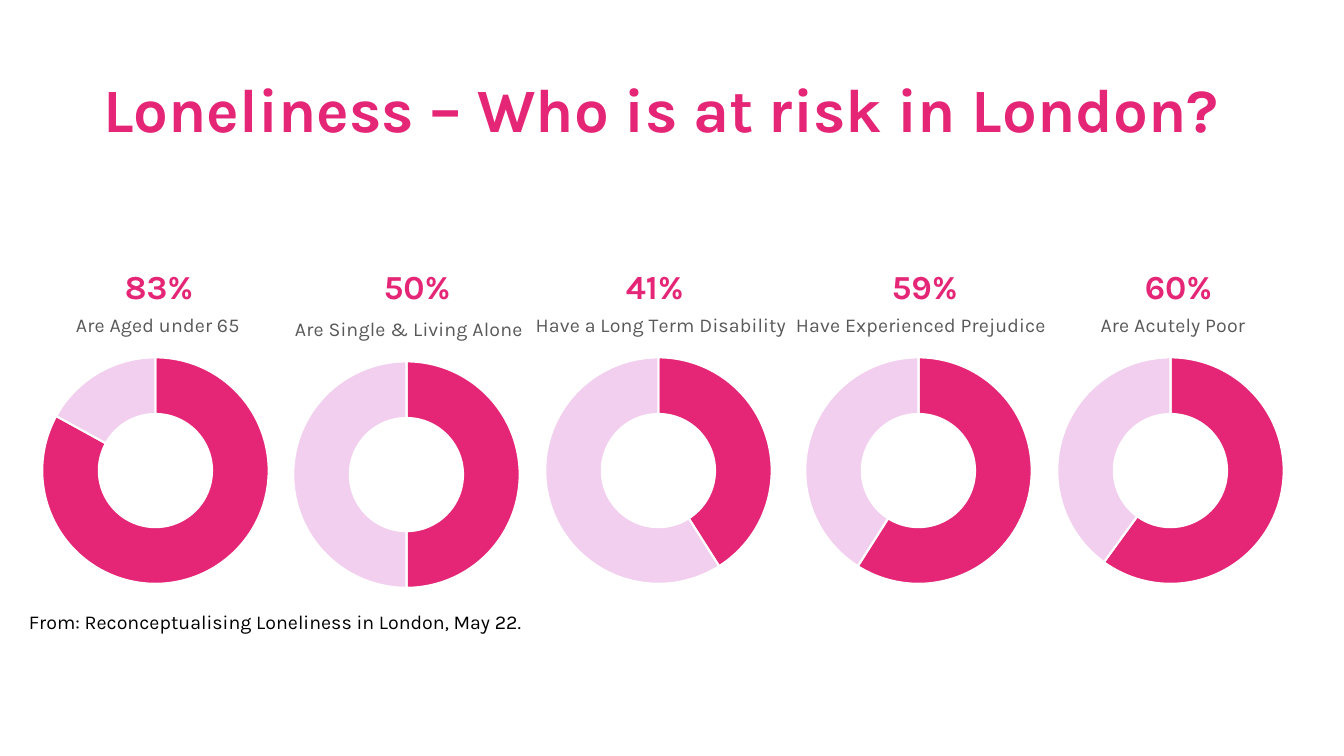
"""Builds a slide of five doughnut charts on who is at risk of loneliness in London."""
import pptx
import pptx.chart.data
import pptx.dml.color
import pptx.enum.chart
import pptx.enum.text
import pptx.oxml
import pptx.oxml.ns
import pptx.util

PINK = pptx.dml.color.RGBColor(0xE5, 0x25, 0x76)
PALE_PINK = pptx.dml.color.RGBColor(0xF2, 0xCF, 0xEE)
GREY = pptx.dml.color.RGBColor(0x59, 0x59, 0x59)
BLACK = pptx.dml.color.RGBColor(0, 0, 0)
WHITE = pptx.dml.color.RGBColor(255, 255, 255)
PX = 914400 / 100.8
CHART_NS = pptx.oxml.ns.nsdecls("c", "a")
RING_LAYOUT = (
    f'<c:layout {CHART_NS}><c:manualLayout><c:layoutTarget val="inner"/>'
    '<c:xMode val="edge"/><c:yMode val="edge"/><c:x val="0.27"/><c:y val="0.2"/>'
    '<c:w val="0.45"/><c:h val="0.75"/></c:manualLayout></c:layout>'
)
CLEAR_AREA = f'<c:spPr {CHART_NS}><a:noFill/><a:ln><a:noFill/></a:ln></c:spPr>'


def px(*lengths):
    return [pptx.util.Emu(round(length * PX)) for length in lengths]


def write(frame, text, size, color, bold=False):
    frame.text = text
    font = frame.paragraphs[0].runs[0].font
    font.name = "Karla"
    font.size = pptx.util.Pt(size)
    font.bold = bold
    font.color.rgb = color


deck = pptx.Presentation()
deck.slide_width, deck.slide_height = px(1344, 756)
slide = deck.slides.add_slide(deck.slide_layouts[5])

heading = slide.shapes.title
heading.left, heading.top, heading.width, heading.height = px(93, 40, 1159, 146)
write(heading.text_frame, "Loneliness – Who is at risk in London?", 44, PINK, True)
heading.text_frame.vertical_anchor = pptx.enum.text.MSO_ANCHOR.MIDDLE
heading.text_frame.paragraphs[0].alignment = pptx.enum.text.PP_ALIGN.LEFT
heading.text_frame.paragraphs[0].line_spacing = 0.9

RISK_GROUPS = [
    ("Are Aged under 65", 83, -94, 297, 115),
    ("Are Single & Living Alone", 50, 157, 301, 374),
    ("Have a Long Term Disability", 41, 409, 297, 616),
    ("Have Experienced Prejudice", 59, 669, 297, 882),
    ("Are Acutely Poor", 60, 921, 297, 1135),
]
for group, share, ring_left, ring_top, share_left in RISK_GROUPS:
    split = pptx.chart.data.CategoryChartData()
    split.categories = ["1", "2"]
    split.add_series("Series 1", (share, 100 - share))
    ring = slide.shapes.add_chart(
        pptx.enum.chart.XL_CHART_TYPE.DOUGHNUT, *px(ring_left, ring_top, 504, 302), split
    ).chart
    ring.has_legend = False
    ring.font.name = "Karla"
    ring.font.size = pptx.util.Pt(10)
    ring.font.color.rgb = BLACK
    ring.has_title = True
    write(ring.chart_title.text_frame, group, 14, GREY)
    ring.chart_title.include_in_layout = False
    ring.plots[0].vary_by_categories = True
    for index, color in enumerate((PINK, PALE_PINK)):
        slice_format = ring.plots[0].series[0].points[index].format
        slice_format.fill.solid()
        slice_format.fill.fore_color.rgb = color
        slice_format.line.color.rgb = WHITE
        slice_format.line.width = pptx.util.Pt(1.5)
    plot_area = ring._chartSpace.chart.plotArea
    for layout in plot_area.findall(pptx.oxml.ns.qn("c:layout")):
        plot_area.remove(layout)
    plot_area.insert(0, pptx.oxml.parse_xml(RING_LAYOUT))
    ring._chartSpace.chart.addnext(pptx.oxml.parse_xml(CLEAR_AREA))

    percent = slide.shapes.add_textbox(*px(share_left, 261, 107, 50)).text_frame
    percent.word_wrap = True
    write(percent, f"{share}%", 24, PINK, True)

credit = slide.shapes.add_textbox(*px(19, 605, 1154, 34)).text_frame
credit.word_wrap = True
write(credit, "From: Reconceptualising Loneliness in London, May 22.", 14, BLACK)

deck.save("out.pptx")
